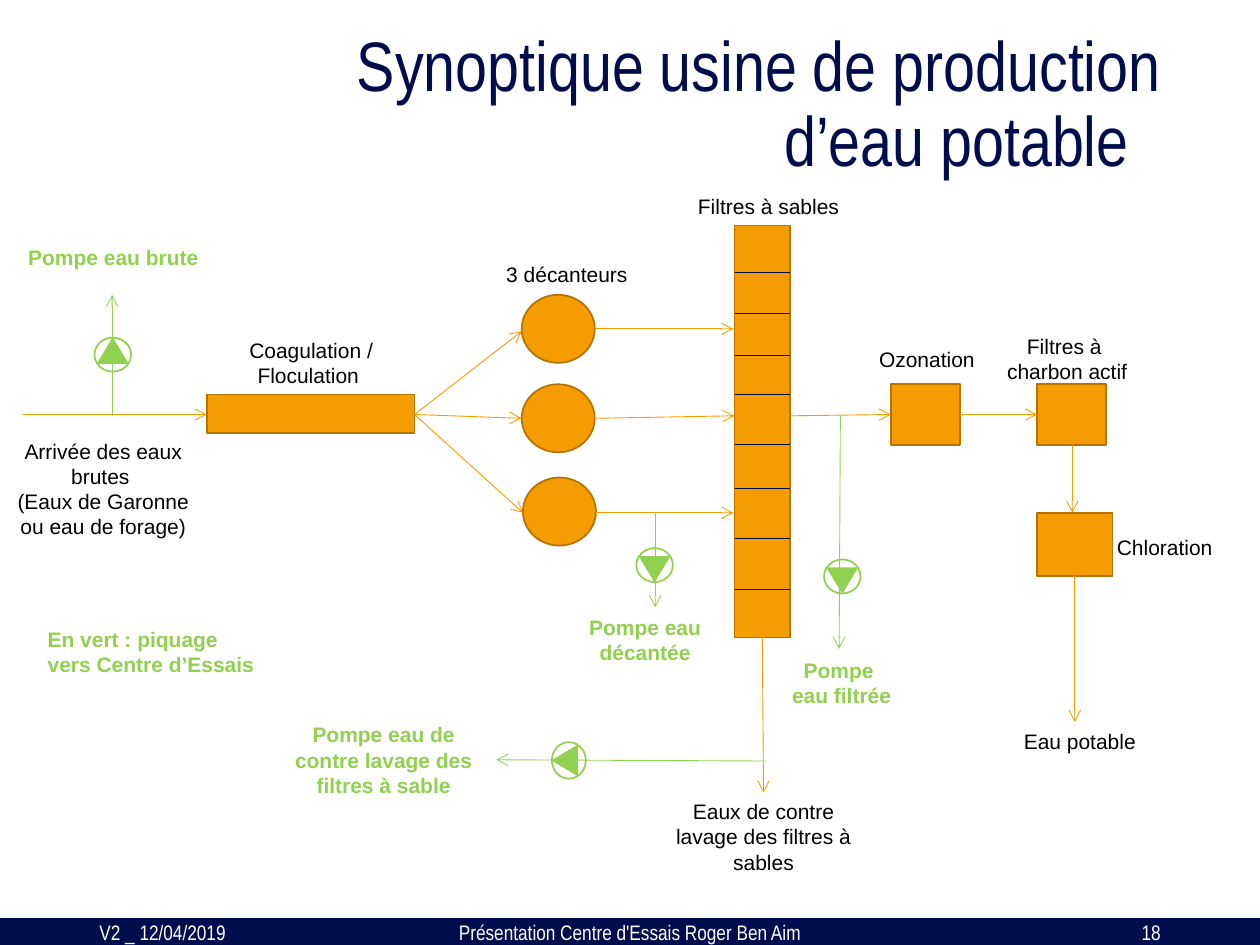
from dataclasses import dataclass
from math import cos, radians, sin

from lxml import etree
from pptx import Presentation
from pptx.dml.color import RGBColor
from pptx.enum.shapes import MSO_CONNECTOR, MSO_SHAPE
from pptx.enum.text import MSO_ANCHOR, MSO_AUTO_SIZE, PP_ALIGN
from pptx.oxml.ns import qn
from pptx.util import Inches, Pt

RECT, OVAL, TRIANGLE = MSO_SHAPE.RECTANGLE, MSO_SHAPE.OVAL, MSO_SHAPE.ISOSCELES_TRIANGLE
STRAIGHT = MSO_CONNECTOR.STRAIGHT
TOP, MIDDLE = MSO_ANCHOR.TOP, MSO_ANCHOR.MIDDLE
LEFT, CENTER, RIGHT = PP_ALIGN.LEFT, PP_ALIGN.CENTER, PP_ALIGN.RIGHT


@dataclass(frozen=True)
class Theme:
    navy: RGBColor = RGBColor.from_string("000D4C")
    orange: RGBColor = RGBColor.from_string("F59C00")
    outline: RGBColor = RGBColor.from_string("B57300")
    green: RGBColor = RGBColor.from_string("92D050")
    black: RGBColor = RGBColor.from_string("000000")
    white: RGBColor = RGBColor.from_string("FFFFFF")
    body_font: str = "Arial"
    title_font: str = "Arial Narrow"
    title_size: int = 40
    body_size: int = 12
    border: float = 1
    flow: float = 0.5


theme = Theme()
prs = Presentation()
prs.slide_width, prs.slide_height = Inches(10), Inches(7.5)
COL, ROW = prs.slide_width / 100, prs.slide_height / 75
slide = prs.slides.add_slide(prs.slide_layouts[5])


def write(frame, text, color, font, size=theme.body_size, align=CENTER, anchor=TOP, bold=False):
    frame.word_wrap = True
    frame.vertical_anchor = anchor
    for index, line in enumerate(text.split("\n")):
        paragraph = frame.add_paragraph() if index else frame.paragraphs[0]
        paragraph.alignment = align
        run = paragraph.add_run()
        run.text = line
        run.font.name, run.font.size, run.font.bold = font, Pt(size), bold
        run.font.color.rgb = color


def draw_line(x1, y1, x2, y2, color, arrow=True):
    link = slide.shapes.add_connector(
        STRAIGHT, round(x1 * COL), round(y1 * ROW), round(x2 * COL), round(y2 * ROW))
    link.line.color.rgb = color
    link.line.width = Pt(theme.flow)
    if arrow:
        etree.SubElement(link.line._get_or_add_ln(), qn("a:tailEnd"), type="arrow")
    etree.SubElement(link._element.spPr, qn("a:effectLst"))


title = slide.shapes.title
title.left, title.top = round(21 * COL), round(3.7 * ROW)
title.width, title.height = round(72.1 * COL), round(9.5 * ROW)
write(title.text_frame, "Synoptique usine de production d’eau potable  ", theme.navy,
      theme.title_font, theme.title_size, RIGHT, MIDDLE)
title.text_frame.auto_size = MSO_AUTO_SIZE.NONE
title.text_frame.paragraphs[0].line_spacing = 0.9

solids = [(RECT, 0, 72.9, 100, 2.1, theme.navy, theme.navy)]
solids += [(preset, *box, theme.orange, theme.outline) for preset, *box in [
    (RECT, 16.4, 31.3, 16.5, 3.1),
    (OVAL, 41.4, 23.4, 5.8, 5.4),
    (OVAL, 41.4, 30.5, 5.8, 5.4),
    (OVAL, 41.5, 37.9, 5.8, 5.4),
    (RECT, 58.3, 17.9, 4.4, 32.7),
    (RECT, 70.7, 30.5, 5.5, 4.8),
    (RECT, 82.3, 30.5, 5.5, 4.8),
    (RECT, 82.3, 40.7, 6, 5),
]]
for preset, x, y, w, h, fill, outline in solids:
    solid = slide.shapes.add_shape(
        preset, round(x * COL), round(y * ROW), round(w * COL), round(h * ROW))
    solid.shadow.inherit = False
    solid.fill.solid()
    solid.fill.fore_color.rgb = fill
    solid.line.color.rgb = outline
    solid.line.width = Pt(theme.border)

for y in (21.6, 24.9, 28.2, 31.3, 35.3, 38.8, 42.7, 46.8):
    draw_line(58.3, y, 62.7, y, theme.navy, arrow=False)

water_flows = [
    (1.8, 32.9, 16.4, 32.9),
    (32.9, 32.9, 41.4, 26.3), (32.9, 32.9, 41.4, 33.2), (32.9, 32.9, 41.5, 40.7),
    (47.3, 26.1, 58.2, 26.1), (47.3, 33.2, 58.3, 33), (47.3, 40.7, 58.2, 40.7),
    (60.5, 50.6, 60.6, 62.9),
    (62.7, 33, 70.7, 32.9), (76.2, 32.9, 82.3, 32.9),
    (85.1, 35.3, 85.1, 40.7), (85.3, 45.6, 85.3, 57.3),
]
for flow in water_flows:
    draw_line(*flow, theme.orange)

pumps = [(8.95, 28.15, 0), (51.95, 44.85, 180), (66.85, 45.75, 180), (45.15, 60.35, 270)]
for x, y, angle in pumps:
    tip_x, tip_y = 0.3 * sin(radians(angle)), -0.3 * cos(radians(angle))
    for preset, cx, cy, w, h in [(OVAL, x, y, 2.9, 2.7),
                                 (TRIANGLE, x + tip_x, y + tip_y, 2.3, 1.9)]:
        part = slide.shapes.add_shape(preset, round((cx - w / 2) * COL), round((cy - h / 2) * ROW),
                                      round(w * COL), round(h * ROW))
        part.shadow.inherit = False
        part.rotation = angle
        part.line.color.rgb = theme.green
        part.line.width = Pt(theme.border)
        if preset == TRIANGLE:
            part.fill.solid()
            part.fill.fore_color.rgb = theme.green
        else:
            part.fill.background()

for tapping in [(8.9, 33, 8.9, 23.4), (52, 40.7, 52, 48.2),
                (66.7, 33, 66.6, 51.5), (60.8, 60.4, 39.4, 60.3)]:
    draw_line(*tapping, theme.green)

step_style = dict(color=theme.black, font=theme.body_font)
pump_style = dict(color=theme.green, font=theme.body_font, bold=True)
footer_style = dict(color=theme.white, font=theme.title_font, anchor=MIDDLE)
captions = [
    (0, 34.3, 16.4, 9.1, "Arrivée des eaux brutes \n(Eaux de Garonne ou eau de forage)", step_style),
    (16.5, 26.3, 16.4, 5, "Coagulation / Floculation ", step_style),
    (36.8, 20.3, 16.4, 3, "3 décanteurs", step_style),
    (52.8, 14.9, 16.4, 3, "Filtres à sables", step_style),
    (52.4, 62.9, 16.4, 7.1, "Eaux de contre lavage des filtres à sables", step_style),
    (65.6, 27, 16.4, 3, "Ozonation ", step_style),
    (76.5, 26, 16.4, 5, "Filtres à \ncharbon actif", step_style),
    (84.7, 41.9, 16.4, 3, "Chloration  ", step_style),
    (78.2, 57.3, 16.4, 3, "Eau potable   ", step_style),
    (0.8, 18.9, 16.4, 3, "Pompe eau brute", pump_style),
    (43, 48.3, 16.4, 5, "Pompe eau décantée", pump_style),
    (21.5, 56.8, 17.9, 7.1, "Pompe eau de contre lavage des filtres à sable", pump_style),
    (58.6, 51.7, 16.4, 5, "Pompe \neau filtrée", pump_style),
    (2.8, 49.2, 18.7, 5, "En vert : piquage vers Centre d’Essais", pump_style | dict(align=LEFT)),
    (6.9, 73, 22.5, 2, "V2 _ 12/04/2019", footer_style | dict(align=LEFT)),
    (33.1, 73, 33.8, 2, "Présentation Centre d'Essais Roger Ben Aim", footer_style),
    (70.6, 73, 22.5, 2, "18", footer_style | dict(align=RIGHT)),
]
for x, y, w, h, text, style in captions:
    caption = slide.shapes.add_textbox(
        round(x * COL), round(y * ROW), round(w * COL), round(h * ROW))
    write(caption.text_frame, text, **style)

prs.save("out.pptx")
